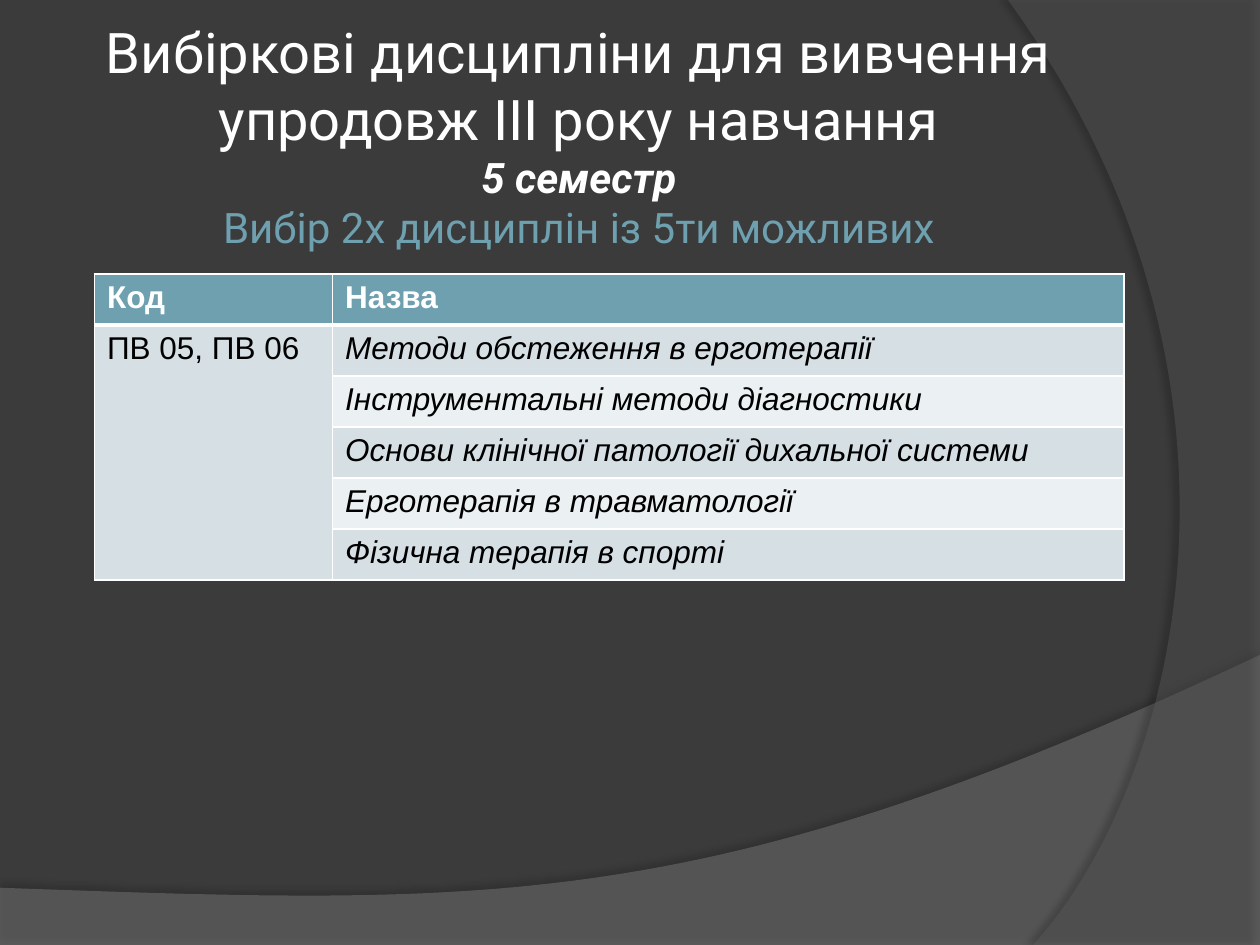
from dataclasses import dataclass

from lxml.etree import SubElement
from pptx import Presentation
from pptx.dml.color import RGBColor
from pptx.enum.text import MSO_ANCHOR, MSO_AUTO_SIZE, PP_ALIGN
from pptx.oxml.ns import qn
from pptx.util import Emu, Inches, Pt

SLIDE_W, SLIDE_H = Inches(10), Inches(7.5)


@dataclass(frozen=True)
class Theme:
    background: str = "3B3B3B"
    wave: str = "7F7F7F"
    arc: str = "5E5E5E"
    shadow: str = "000000"
    light: str = "FFFFFF"
    dark: str = "000000"
    accent: str = "6EA0B0"
    bands: tuple = ("D5DFE4", "EBF0F2")
    title_font: str = "Roboto"
    table_font: str = "Arial"
    title_size: int = 32
    subtitle_size: int = 24
    table_size: int = 18


THEME = Theme()

TITLE_LINES = [
    ("Вибіркові дисципліни для вивчення упродовж ІІІ року навчання",
     dict(size=THEME.title_size, color=THEME.light, bold=False, italic=False)),
    ("5 семестр",
     dict(size=THEME.subtitle_size, color=THEME.light, bold=True, italic=True)),
    ("Вибір 2х дисциплін із 5ти можливих",
     dict(size=THEME.subtitle_size, color=THEME.accent, bold=False, italic=False)),
]
HEADINGS = ["Код", "Назва"]
CODE = "ПВ 05, ПВ 06"
DISCIPLINES = [
    "Методи обстеження в ерготерапії",
    "Інструментальні методи діагностики",
    "Основи клінічної патології дихальної системи",
    "Ерготерапія в травматології",
    "Фізична терапія в спорті",
]


def share_box(left, top, width, height):
    """Turn shares of the slide into lengths."""
    return (Emu(int(SLIDE_W * left)), Emu(int(SLIDE_H * top)),
            Emu(int(SLIDE_W * width)), Emu(int(SLIDE_H * height)))


def format_font(font, size, color, **values):
    font.size = Pt(size)
    font.color.rgb = RGBColor.from_string(color)
    for attribute, value in values.items():
        setattr(font, attribute, value)


def bezier(start, control_1, control_2, end, steps=60):
    """Points along a cubic curve, the start included."""
    points = []
    for step in range(steps + 1):
        t = step / steps
        weights = ((1 - t) ** 3, 3 * t * (1 - t) ** 2, 3 * t ** 2 * (1 - t), t ** 3)
        corners = (start, control_1, control_2, end)
        points.append(tuple(sum(w * c[axis] for w, c in zip(weights, corners))
                            for axis in (0, 1)))
    return points


def add_swoosh(slide, box, outline, color, opacity, shadow):
    """Translucent background form; the outline is in shares of the box."""
    left, top, width, height = box
    points = [(int(left + x * width), int(top + y * height)) for x, y in outline]
    builder = slide.shapes.build_freeform(*points[0])
    builder.add_line_segments(points[1:], close=True)
    swoosh = builder.convert_to_shape()
    swoosh.fill.solid()
    swoosh.fill.fore_color.rgb = RGBColor.from_string(color)
    swoosh.line.fill.background()
    swoosh.shadow.inherit = False

    # Transparency and soft shadow
    properties = swoosh.element.spPr
    tint = properties.find(qn("a:solidFill")).find(qn("a:srgbClr"))
    SubElement(tint, qn("a:alpha"), val=str(opacity * 1000))
    outer = SubElement(properties.find(qn("a:effectLst")), qn("a:outerShdw"),
                       blurRad=str(Pt(shadow["blur"])), dist=str(Pt(shadow["distance"])),
                       dir=str(shadow["angle"] * 60000), rotWithShape="0")
    shade = SubElement(outer, qn("a:srgbClr"), val=THEME.shadow)
    SubElement(shade, qn("a:alpha"), val=str(shadow["opacity"] * 1000))


def add_background(slide):
    slide.background.fill.solid()
    slide.background.fill.fore_color.rgb = RGBColor.from_string(THEME.background)
    # Wave along the bottom
    add_swoosh(slide, share_box(0, 0.693, 1, 0.308),
               [(0, 0.8), (0, 1), (1, 1)]
               + bezier((1, 0), (0.56, 0.9), (0.39, 0.86), (0, 0.8)),
               THEME.wave, 45, dict(blur=4, distance=3.5, angle=270, opacity=35))
    # Arc down the right side
    add_swoosh(slide, share_box(0.8, 0, 0.2, 1),
               [(1, 0), (1, 1)]
               + bezier((0.1, 1), (0.68, 0.83), (1.09, 0.4), (0, 0)),
               THEME.arc, 40, dict(blur=4, distance=4, angle=180, opacity=45))


def place_title(slide, box):
    title = slide.shapes.title
    title.left, title.top, title.width, title.height = box
    title.element.getparent().append(title.element)  # in front of the background
    frame = title.text_frame
    margins = dict.fromkeys(
        ("margin_left", "margin_top", "margin_right", "margin_bottom"), Inches(0.05))
    layout = dict(word_wrap=True, auto_size=MSO_AUTO_SIZE.NONE,
                  vertical_anchor=MSO_ANCHOR.MIDDLE, **margins)
    for attribute, value in layout.items():
        setattr(frame, attribute, value)

    heading = frame.paragraphs[0]
    heading.alignment = PP_ALIGN.CENTER
    for index, (wording, style) in enumerate(TITLE_LINES):
        if index:
            heading.add_line_break()
        run = heading.add_run()
        run.text = wording
        format_font(run.font, name=THEME.title_font, **style)


def format_cell(cell, fill, **edges):
    """White borders, 1 pt unless an edge says otherwise, then the fill."""
    properties = cell._tc.get_or_add_tcPr()
    for edge in ("lnL", "lnR", "lnT", "lnB"):
        border = SubElement(properties, qn(f"a:{edge}"), w=str(Pt(edges.get(edge, 1))))
        SubElement(SubElement(border, qn("a:solidFill")), qn("a:srgbClr"), val=THEME.light)
    cell.fill.solid()
    cell.fill.fore_color.rgb = RGBColor.from_string(fill)


def write_cell(cell, wording, color, **style):
    run = cell.text_frame.paragraphs[0].add_run()
    run.text = wording
    format_font(run.font, THEME.table_size, color, name=THEME.table_font, **style)


def add_disciplines(slide, box):
    row_count = len(DISCIPLINES) + 1
    table = slide.shapes.add_table(row_count, len(HEADINGS), *box).table
    code_width = Inches(1.89)
    table.columns[0].width = code_width
    table.columns[1].width = box[2] - code_width

    # Header row
    for column, heading in enumerate(HEADINGS):
        cell = table.cell(0, column)
        format_cell(cell, THEME.accent, lnB=3)
        write_cell(cell, heading, THEME.light, bold=True)

    # One code for all disciplines, names in banded rows
    for row, discipline in enumerate(DISCIPLINES, start=1):
        top_edge = 3 if row == 1 else 1
        format_cell(table.cell(row, 0), THEME.bands[0], lnT=top_edge)
        name_cell = table.cell(row, 1)
        format_cell(name_cell, THEME.bands[(row - 1) % 2], lnT=top_edge)
        write_cell(name_cell, discipline, THEME.dark, bold=False, italic=True)
    write_cell(table.cell(1, 0), CODE, THEME.dark, bold=False)
    table.cell(1, 0).merge(table.cell(row_count - 1, 0))


def main():
    deck = Presentation()
    deck.slide_width, deck.slide_height = SLIDE_W, SLIDE_H
    slide = deck.slides.add_slide(deck.slide_layouts[5])
    add_background(slide)
    place_title(slide, share_box(0.051, 0.059, 0.817, 0.167))
    add_disciplines(slide, share_box(0.075, 0.29, 0.817, 0.324))
    deck.save("out.pptx")


if __name__ == "__main__":
    main()
